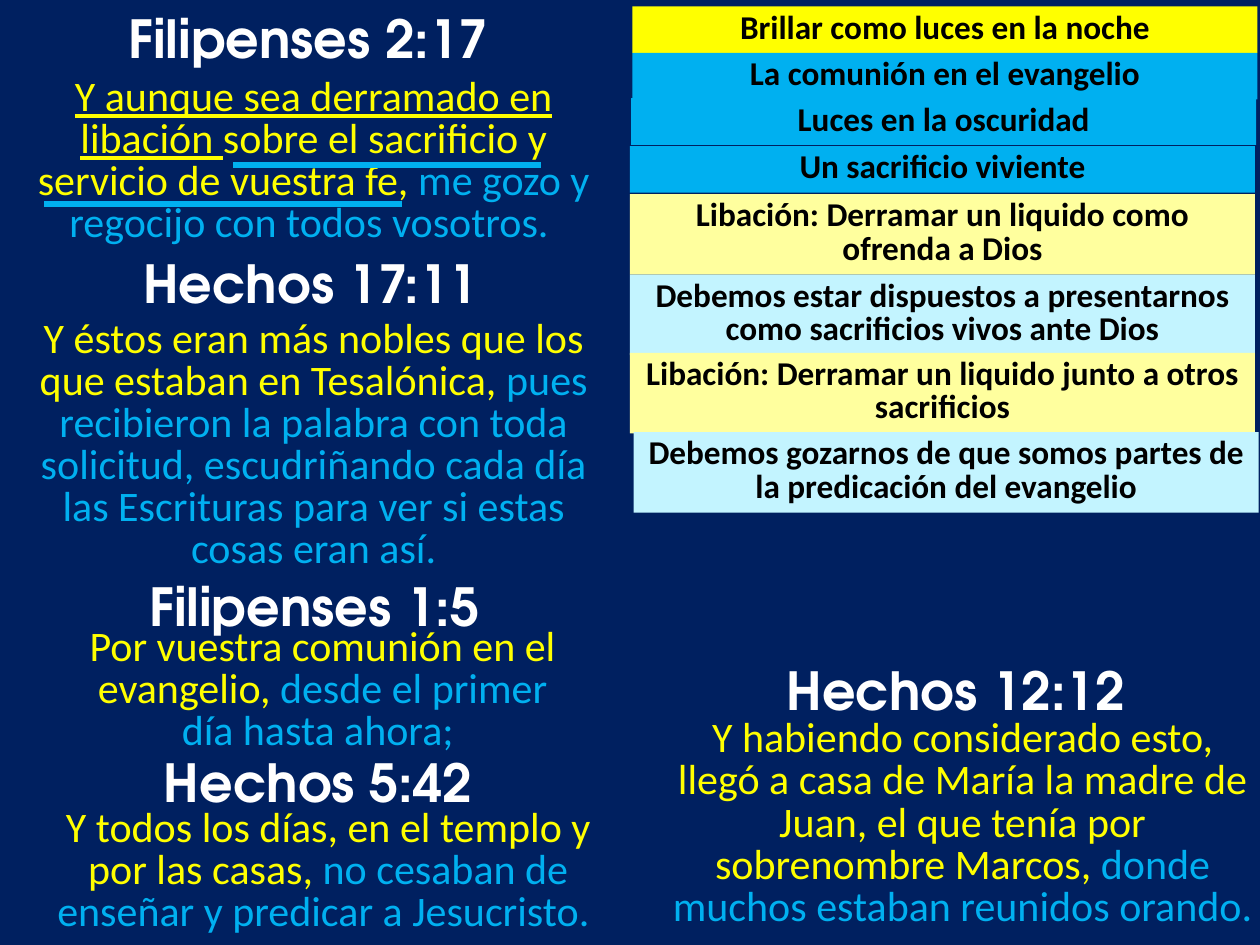
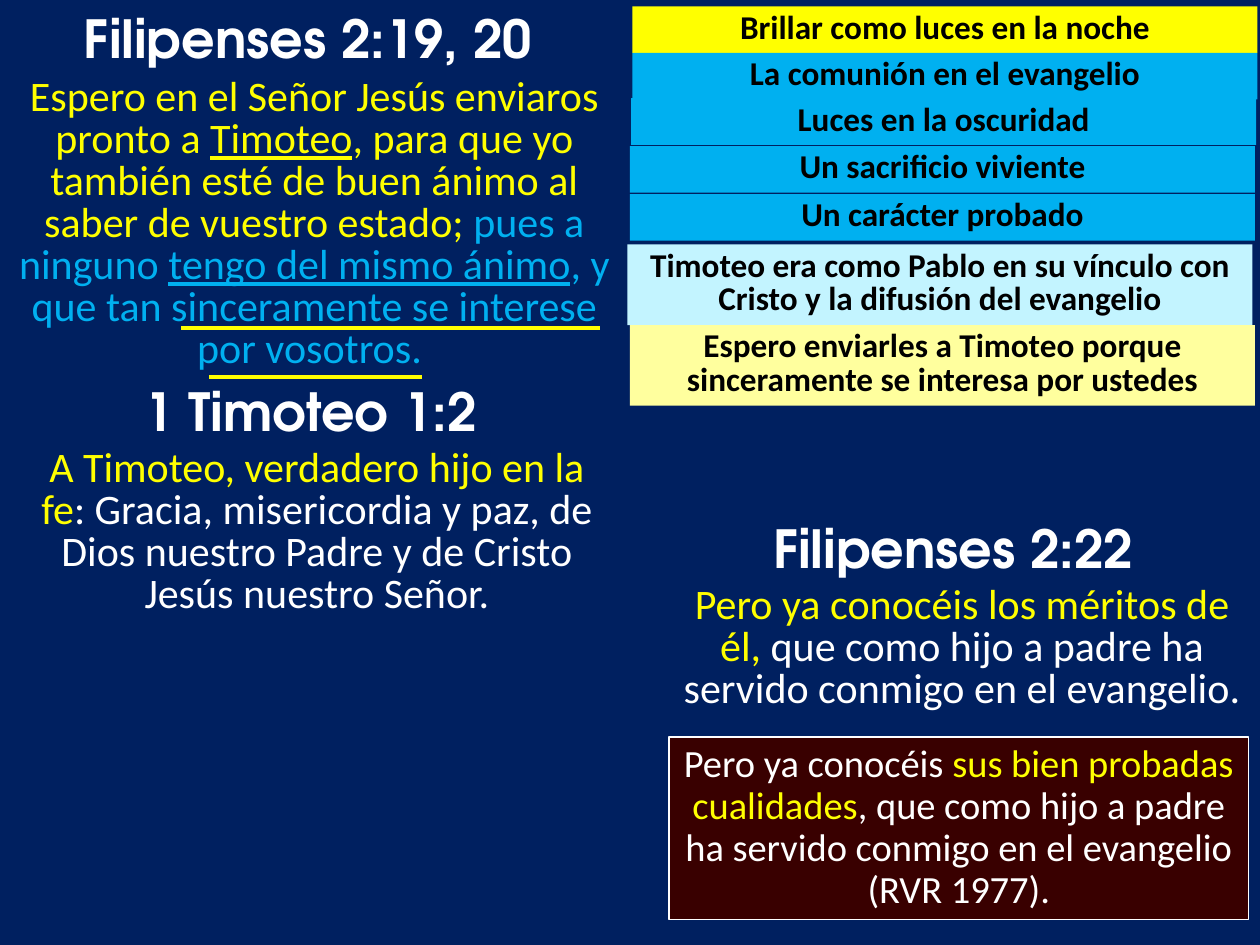
from pptx import Presentation
from pptx.dml.color import RGBColor
from pptx.enum import shapes, text
from pptx.util import Inches, Pt
from lxml import etree

NAVY = RGBColor(0x00, 0x20, 0x60)
WHITE = RGBColor(0xFF, 0xFF, 0xFF)
BLACK = RGBColor(0x00, 0x00, 0x00)
YELLOW = RGBColor(0xFF, 0xFF, 0x00)
BLUE = RGBColor(0x00, 0xB0, 0xF0)
CREAM = RGBColor(0xFF, 0xFF, 0x9E)
ICE = RGBColor(0xC3, 0xF4, 0xFF)
MAROON = RGBColor(0x39, 0x00, 0x00)

TITLE_FONT, BODY_FONT = "TeX Gyre Adventor", "Calibri"
TITLE_SIZE, VERSE_SIZE, QUOTE_SIZE, BAND_SIZE = 30, 24, 22, 19
TITLE_WIDTH, TITLE_HEIGHT = 4.65, 0.61
BAND_WIDTH = 4.96
BAND_HEIGHTS = {1: 0.37, 2: 0.64}
A_NS = "http://schemas.openxmlformats.org/drawingml/2006/main"

# Bands: left, top, number of lines, fill, wording
SHARED_BANDS = [
    (5.02, 0.05, 1, YELLOW, "Brillar como luces en la noche"),
    (5.02, 0.42, 1, BLUE, "La comunión en el evangelio"),
    (5.01, 0.78, 1, BLUE, "Luces en la oscuridad"),
    (5, 1.16, 1, BLUE, "Un sacrificio viviente"),
]

# Passages: title, title position, verse box, runs (wording, colour, underlined)
# Underlines: start x, end x, y, colour, width in points
SLIDES = [
    {
        "bands": [
            (5, 1.54, 2, CREAM, "Libación: Derramar un liquido como ofrenda a Dios"),
            (5, 2.18, 2, ICE, "Debemos estar dispuestos a presentarnos como sacrificios vivos ante Dios"),
            (5, 2.8, 2, CREAM, "Libación: Derramar un liquido junto a otros sacrificios"),
            (5.03, 3.43, 2, ICE, "Debemos gozarnos de que somos partes de la predicación del evangelio"),
        ],
        "passages": [
            ("Filipenses 2:17", (0.12, 0), (0.01, 0.57, 4.96, 1.45), [
                ("Y aunque sea derramado en libación ", YELLOW, True),
                ("sobre el sacrificio y servicio de vuestra fe, ", YELLOW, False),
                ("me gozo y regocijo con todos vosotros. ", BLUE, False)]),
            ("Hechos 17:11", (0.14, 1.94), (0.01, 2.49, 4.96, 2.13), [
                ("Y éstos eran más nobles que los que estaban en Tesalónica, ", YELLOW, False),
                ("pues recibieron la palabra con toda solicitud, escudriñando cada día "
                 "las Escrituras para ver si estas cosas eran así.", BLUE, False)]),
            ("Filipenses 1:5", (0.17, 4.51), (0.59, 4.93, 3.94, 1.12), [
                ("Por vuestra comunión en el evangelio, ", YELLOW, False),
                ("desde el primer día hasta ahora; ", BLUE, False)]),
            ("Hechos 5:42", (0.2, 5.9), (0.28, 6.37, 4.65, 1.12), [
                ("Y todos los días, en el templo y por las casas, ", YELLOW, False),
                ("no cesaban de enseñar y predicar a Jesucristo. ", BLUE, False)]),
            ("Hechos 12:12", (5.26, 5.17), (5.24, 5.66, 4.8, 1.79), [
                ("Y habiendo considerado esto, llegó a casa de María la madre de Juan, "
                 "el que tenía por sobrenombre Marcos, ", YELLOW, False),
                ("donde muchos estaban reunidos orando. ", BLUE, False)]),
        ],
        "underlines": [(1.85, 4.29, 1.31, BLUE, 3), (0.35, 3.19, 1.62, BLUE, 3)],
        "quotes": [],
    },
    {
        "bands": [
            (5, 1.54, 1, BLUE, "Un carácter probado"),
            (4.98, 1.94, 2, ICE, "Timoteo era como Pablo en su vínculo con Cristo y la difusión del evangelio"),
            (5, 2.58, 2, CREAM, "Espero enviarles a Timoteo porque sinceramente se interesa por ustedes"),
        ],
        "passages": [
            ("Filipenses 2:19, 20", (0.12, 0), (0.01, 0.57, 4.97, 2.46), [
                ("Espero en el Señor Jesús enviaros pronto a ", YELLOW, False),
                ("Timoteo", YELLOW, True),
                (", para que yo también esté de buen ánimo al saber de vuestro estado; ", YELLOW, False),
                ("pues a ninguno ", BLUE, False),
                ("tengo del mismo ánimo", BLUE, True),
                (", y que tan sinceramente se interese por vosotros. ", BLUE, False)]),
            ("1 Timoteo 1:2", (0.14, 2.96), (0.14, 3.51, 4.75, 1.45), [
                ("A Timoteo, verdadero hijo en la fe", YELLOW, False),
                (": Gracia, misericordia y paz, de Dios nuestro Padre y de Cristo "
                 "Jesús nuestro Señor.", WHITE, False)]),
            ("Filipenses 2:22", (5.24, 4.05), (5.31, 4.6, 4.65, 1.12), [
                ("Pero ya conocéis los méritos de él,", YELLOW, False),
                (" que como hijo a padre ha servido conmigo en el evangelio. ", WHITE, False)]),
        ],
        "underlines": [(1.44, 4.76, 2.6, YELLOW, 2.25), (1.66, 3.35, 2.99, YELLOW, 2.25)],
        "quotes": [
            ((5.31, 5.85, 4.6, 1.45), [
                ("Pero ya conocéis ", WHITE, False),
                ("sus bien probadas cualidades", YELLOW, False),
                (", que como hijo a padre ha servido conmigo en el evangelio (RVR 1977).", WHITE, False)]),
        ],
    },
]


def write_runs(shape, runs, size, font=BODY_FONT, bold=False, spacing=None):
    """Fill a shape with one centred paragraph; spacing is the line pitch in points."""
    frame = shape.text_frame
    frame.word_wrap = True
    frame.vertical_anchor = text.MSO_ANCHOR.TOP
    paragraph = frame.paragraphs[0]
    paragraph.alignment = text.PP_ALIGN.CENTER
    if spacing:
        paragraph.line_spacing = Pt(spacing)
    for wording, color, underlined in runs:
        run = paragraph.add_run()
        run.text = wording
        run.font.name = font
        run.font.size = Pt(size)
        run.font.bold = bold
        run.font.color.rgb = color
        if underlined:
            run.font.underline = True


def add_text(slide, box, runs, size, **style):
    shape = slide.shapes.add_textbox(*map(Inches, box))
    write_runs(shape, runs, size, **style)


def add_panel(slide, box, fill, runs, size, line=None, **style):
    shape = slide.shapes.add_shape(shapes.MSO_SHAPE.RECTANGLE, *map(Inches, box))
    shape.shadow.inherit = False
    shape.fill.solid()
    shape.fill.fore_color.rgb = fill
    if line is None:
        shape.line.fill.background()
    else:
        shape.line.color.rgb = line
        shape.line.width = Pt(0.75)
    write_runs(shape, runs, size, **style)


def add_underline(slide, start, end, y, color, width):
    connector = slide.shapes.add_connector(
        shapes.MSO_CONNECTOR.STRAIGHT, *map(Inches, (start, y, end, y)))
    connector.line.color.rgb = color
    connector.line.width = Pt(width)
    etree.SubElement(connector._element.spPr, f"{{{A_NS}}}effectLst")


def add_study_slide(presentation, content):
    slide = presentation.slides.add_slide(presentation.slide_layouts[6])
    slide.background.fill.solid()
    slide.background.fill.fore_color.rgb = NAVY
    for left, top, lines, fill, wording in SHARED_BANDS + content["bands"]:
        add_panel(slide, (left, top, BAND_WIDTH, BAND_HEIGHTS[lines]), fill,
                  [(wording, BLACK, False)], BAND_SIZE, bold=True, spacing=BAND_SIZE)
    for title, position, box, runs in content["passages"]:
        add_text(slide, (*position, TITLE_WIDTH, TITLE_HEIGHT),
                 [(title, WHITE, False)], TITLE_SIZE, font=TITLE_FONT, bold=True)
        add_text(slide, box, runs, VERSE_SIZE, spacing=VERSE_SIZE)
    for underline in content["underlines"]:
        add_underline(slide, *underline)
    for box, runs in content["quotes"]:
        add_panel(slide, box, MAROON, runs, QUOTE_SIZE, line=WHITE, spacing=VERSE_SIZE)


def main():
    presentation = Presentation()
    presentation.slide_width = Inches(10)
    presentation.slide_height = Inches(7.5)
    for content in SLIDES:
        add_study_slide(presentation, content)
    presentation.save("out.pptx")


if __name__ == "__main__":
    main()
